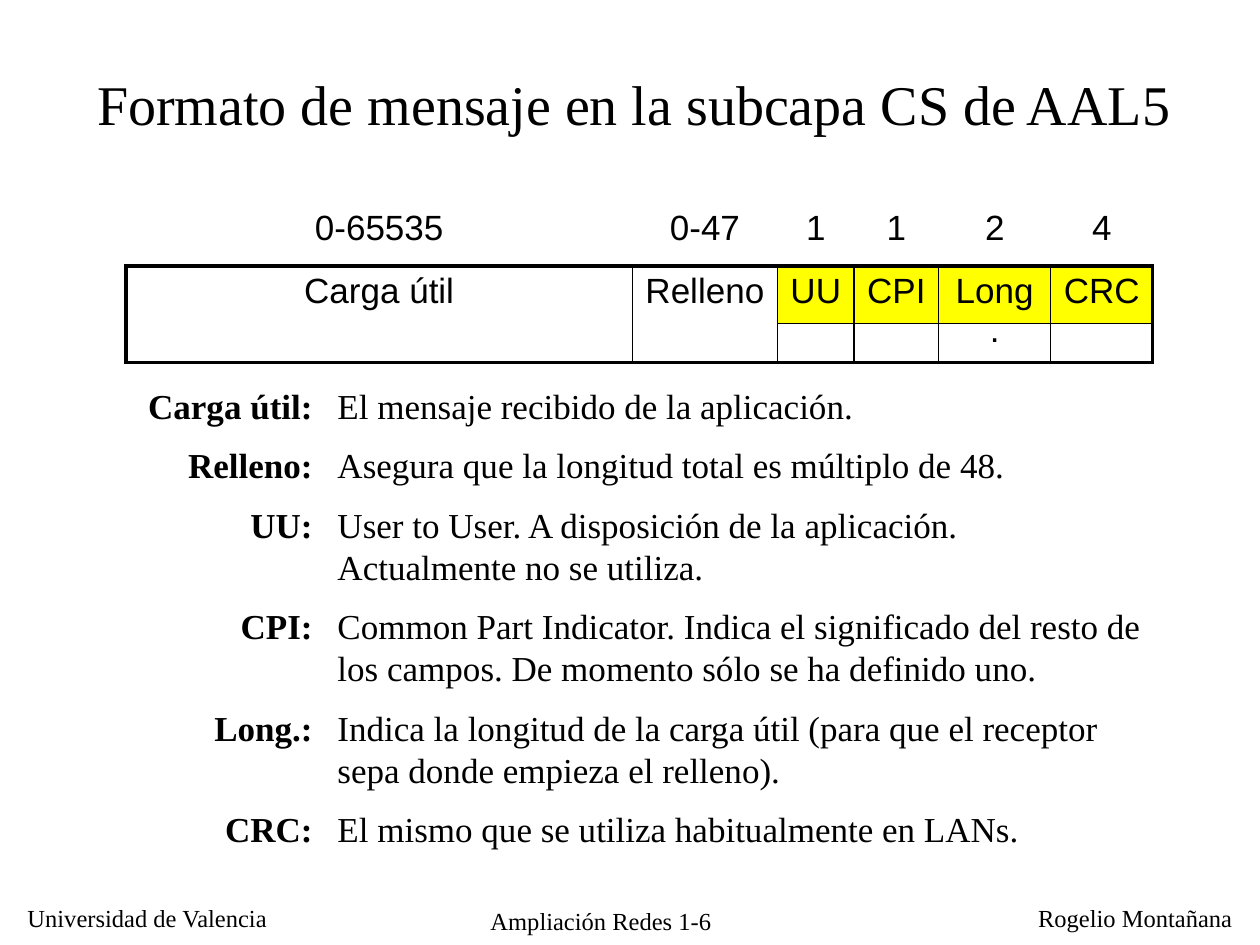
import pptx
import pptx.dml.color
import pptx.enum.shapes
import pptx.enum.text
import pptx.oxml
import pptx.oxml.ns
import pptx.util

Inches, Pt = pptx.util.Inches, pptx.util.Pt
ALIGN = pptx.enum.text.PP_ALIGN
SERIF, SANS = "Times New Roman", "Arial"
BLACK, YELLOW = "000000", "FFFF00"

LEFT, TABLE_TOP, ROW_HEIGHT = 1, 2.11, 0.47
# Field name, size in bytes, column width
FIELDS = [
    ("Carga útil", "0-65535", 4.02),
    ("Relleno", "0-47", 1.15),
    ("UU", "1", 0.61),
    ("CPI", "1", 0.67),
    ("Long.", "2", 0.89),
    ("CRC", "4", 0.81),
]
TRAILER_START = 2
LINE_HEIGHT, GAP = 24, 10

# Label, explanation, number of lines it takes
DEFINITIONS = [
    ("Carga útil:", "El mensaje recibido de la aplicación.", 1),
    ("Relleno:", "Asegura que la longitud total es múltiplo de 48.", 1),
    ("UU:", "User to User. A disposición de la aplicación. "
     "Actualmente no se utiliza.", 2),
    ("CPI:", "Common Part Indicator. Indica el significado del resto de "
     "los campos. De momento sólo se ha definido uno.", 2),
    ("Long.:", "Indica la longitud de la carga útil (para que el receptor "
     "sepa donde empieza el relleno).", 2),
    ("CRC:", "El mismo que se utiliza habitualmente en LANs.", 1),
]


def color(value):
    return pptx.dml.color.RGBColor.from_string(value)


def write(paragraph, text, size, font=SERIF, align=ALIGN.LEFT, bold=False):
    paragraph.alignment = align
    run = paragraph.add_run()
    run.text = text
    run.font.size = Pt(size)
    run.font.name = font
    run.font.bold = bold
    run.font.color.rgb = color(BLACK)


def add_box(slide, left, top, width, height, wrap=True):
    box = slide.shapes.add_textbox(
        Inches(left), Inches(top), Inches(width), Inches(height))
    box.text_frame.word_wrap = wrap
    return box.text_frame


def add_title(slide, text):
    title = slide.shapes.title
    title.left, title.top = Inches(0.67), Inches(0.5)
    title.width, title.height = Inches(8.75), Inches(0.63)
    title.text_frame.word_wrap = True
    title.text_frame.vertical_anchor = pptx.enum.text.MSO_ANCHOR.TOP
    write(title.text_frame.paragraphs[0], text, 32)


def add_footer(slide):
    for text, left, top, width, align in [
            ("Universidad de Valencia", 0.12, 7.12, 2.13, ALIGN.LEFT),
            ("Ampliación Redes 1-6", 3.51, 7.14, 2.52, ALIGN.CENTER),
            ("Rogelio Montañana", 8.14, 7.12, 1.74, ALIGN.LEFT)]:
        frame = add_box(slide, left, top, width, 0.33, wrap=False)
        write(frame.paragraphs[0], text, 14, align=align)


def set_borders(cell, widths):
    """Draw the left, right, top and bottom borders, widths in points."""
    properties = cell._tc.get_or_add_tcPr()
    for position, (side, width) in enumerate(zip("LRTB", widths)):
        properties.insert(position, pptx.oxml.parse_xml(
            f'<a:ln{side} {pptx.oxml.ns.nsdecls("a")} w="{Pt(width)}">'
            f'<a:solidFill><a:srgbClr val="{BLACK}"/></a:solidFill>'
            f'</a:ln{side}>'))


def add_trailer_band(slide, left, width):
    band = slide.shapes.add_shape(
        pptx.enum.shapes.MSO_SHAPE.RECTANGLE,
        Inches(left), Inches(TABLE_TOP + 0.01), Inches(width), Inches(0.45))
    band.shadow.inherit = False
    band.fill.solid()
    band.fill.fore_color.rgb = color(YELLOW)
    band.line.color.rgb = color(BLACK)
    band.line.width = Pt(0.75)


def add_message_format(slide):
    widths = [width for _, _, width in FIELDS]
    lefts = [LEFT + sum(widths[:i]) for i in range(len(widths))]
    add_trailer_band(slide, lefts[TRAILER_START], sum(widths[TRAILER_START:]))

    table = slide.shapes.add_table(
        1, len(FIELDS), Inches(LEFT), Inches(TABLE_TOP),
        Inches(sum(widths)), Inches(ROW_HEIGHT)).table
    table.first_row = table.horz_banding = False
    last = len(FIELDS) - 1
    for i, (name, size, width) in enumerate(FIELDS):
        table.columns[i].width = Inches(width)
        cell = table.cell(0, i)
        cell.fill.background()
        set_borders(cell, (2.25 if i == 0 else 1, 2.25 if i == last else 1,
                           2.25, 2.25))
        paragraph = cell.text_frame.paragraphs[0]
        paragraph.space_before = Pt(4)
        write(paragraph, name, 20, SANS, ALIGN.CENTER)

        # Size in bytes, centred above its field
        frame = add_box(slide, lefts[i], 1.58, width, 0.43, wrap=False)
        write(frame.paragraphs[0], size, 20, SANS, ALIGN.CENTER)


def add_definition_column(slide, left, width, items, align, bold=False):
    """Stack (text, skipped lines before it) pairs in one text box."""
    frame = add_box(slide, left, 3, width, 3.93)
    for i, (text, skipped) in enumerate(items):
        paragraph = frame.add_paragraph() if i else frame.paragraphs[0]
        paragraph.line_spacing = Pt(LINE_HEIGHT)
        paragraph.space_before = Pt(GAP + skipped * LINE_HEIGHT)
        write(paragraph, text, 20, align=align, bold=bold)


def add_definitions(slide):
    # A label moves down by the extra lines of the explanation above it
    skips = [0] + [lines - 1 for _, _, lines in DEFINITIONS[:-1]]
    labels = [(label, skip) for (label, _, _), skip in zip(DEFINITIONS, skips)]
    texts = [(text, 0) for _, text, _ in DEFINITIONS]
    add_definition_column(slide, 2.58, 6.58, texts, ALIGN.LEFT)
    add_definition_column(slide, LEFT, 1.58, labels, ALIGN.RIGHT, bold=True)


def main():
    presentation = pptx.Presentation()
    presentation.slide_width = Inches(10)
    presentation.slide_height = Inches(7.5)
    slide = presentation.slides.add_slide(presentation.slide_layouts[5])
    add_footer(slide)
    add_message_format(slide)
    add_title(slide, "Formato de mensaje en la subcapa CS de AAL5")
    add_definitions(slide)
    presentation.save("out.pptx")


if __name__ == "__main__":
    main()
